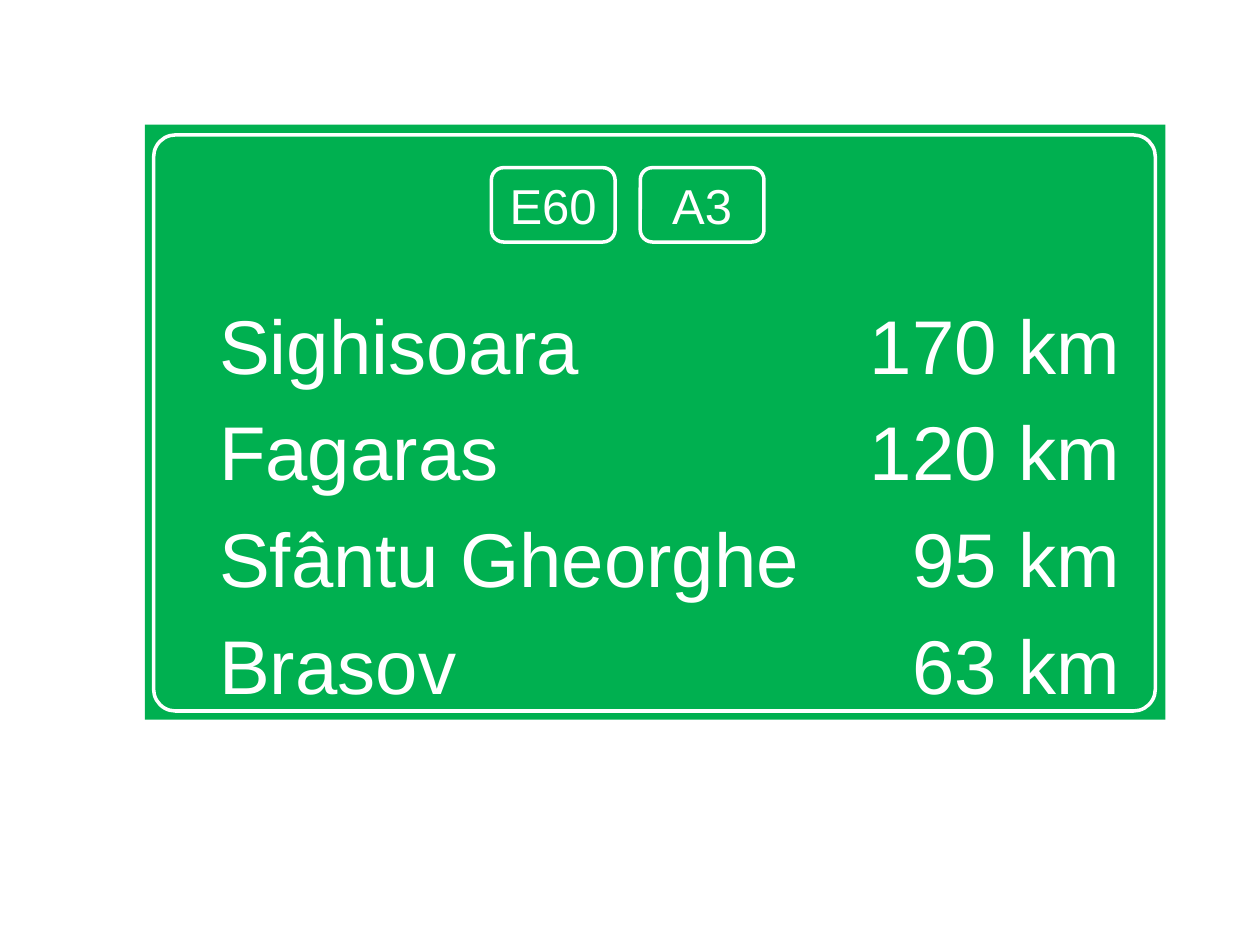
import pptx
import pptx.dml.color
import pptx.enum.shapes
import pptx.enum.text
import pptx.oxml.ns
import pptx.util
import lxml.etree

Pt = pptx.util.Pt
SHAPES = pptx.enum.shapes.MSO_SHAPE
ALIGN = pptx.enum.text.PP_ALIGN
ANCHOR = pptx.enum.text.MSO_ANCHOR
GREEN, WHITE = "00B050", "FFFFFF"
ROADS = ["E60", "A3"]
DISTANCES = [("Sighisoara", 170), ("Fagaras", 120),
             ("Sfântu Gheorghe", 95), ("Brasov", 63)]


def color(hex_string):
    return pptx.dml.color.RGBColor.from_string(hex_string)


def add_panel(slide, kind, box, fill=None, line=None, radius=None):
    """Add a shape; box is left, top, width, height and radius is in points."""
    shape = slide.shapes.add_shape(kind, *map(Pt, box))
    shape.shadow.inherit = False
    if fill:
        shape.fill.solid()
        shape.fill.fore_color.rgb = color(fill)
    else:
        shape.fill.background()
    if line:
        shape.line.color.rgb = color(line)
        shape.line.width = Pt(2)
    else:
        shape.line.fill.background()
    if radius:
        shape.adjustments[0] = radius / min(box[2:])
    return shape


def write(paragraph, text, size, alignment):
    paragraph.text = text
    paragraph.alignment = alignment
    paragraph.font.name = "Arial"
    paragraph.font.size = Pt(size)
    paragraph.font.color.rgb = color(WHITE)


def add_right_tab(paragraph, position):
    properties = paragraph._p.get_or_add_pPr()
    tag = pptx.oxml.ns.qn
    tabs = lxml.etree.Element(tag("a:tabLst"))
    lxml.etree.SubElement(tabs, tag("a:tab"), pos=str(Pt(position)), algn="r")
    # The schema places tab stops before the default run properties.
    properties.find(tag("a:defRPr")).addprevious(tabs)


def add_distance_board(slide, box):
    left, top, width, height = box
    board = add_panel(slide, SHAPES.RECTANGLE, box, fill=GREEN)
    frame = board.text_frame
    frame.word_wrap = True
    frame.vertical_anchor = ANCHOR.TOP
    frame.margin_left, frame.margin_top = Pt(42.5), Pt(99)
    frame.margin_right, frame.margin_bottom = Pt(6), Pt(0)
    for index, (town, distance) in enumerate(DISTANCES):
        paragraph = frame.add_paragraph() if index else frame.paragraphs[0]
        write(paragraph, f"{town}\t{distance} km", 43.5, ALIGN.LEFT)
        paragraph.space_before = Pt(8.8 if index else 0)
        add_right_tab(paragraph, 514.7)
    border = (left + 5, top + 5.8, width - 10.8, height - 10.8)
    add_panel(slide, SHAPES.ROUNDED_RECTANGLE, border, line=WHITE, radius=12.5)


def add_road_badges(slide, box, gap=14.4):
    left, top, width, height = box
    badge_width = (width - gap * (len(ROADS) - 1)) / len(ROADS)
    for index, road in enumerate(ROADS):
        badge_box = (left + index * (badge_width + gap), top, badge_width, height)
        badge = add_panel(slide, SHAPES.ROUNDED_RECTANGLE, badge_box,
                          fill=GREEN, line=WHITE, radius=7)
        frame = badge.text_frame
        frame.vertical_anchor = ANCHOR.MIDDLE
        write(frame.paragraphs[0], road, 28, ALIGN.CENTER)


def main():
    presentation = pptx.Presentation()
    presentation.slide_width, presentation.slide_height = Pt(720), Pt(540)
    slide = presentation.slides.add_slide(presentation.slide_layouts[6])
    add_distance_board(slide, (82.8, 71.3, 583.2, 340))
    add_road_badges(slide, (280.8, 95.8, 155.8, 42.5))
    presentation.save("out.pptx")


if __name__ == "__main__":
    main()
